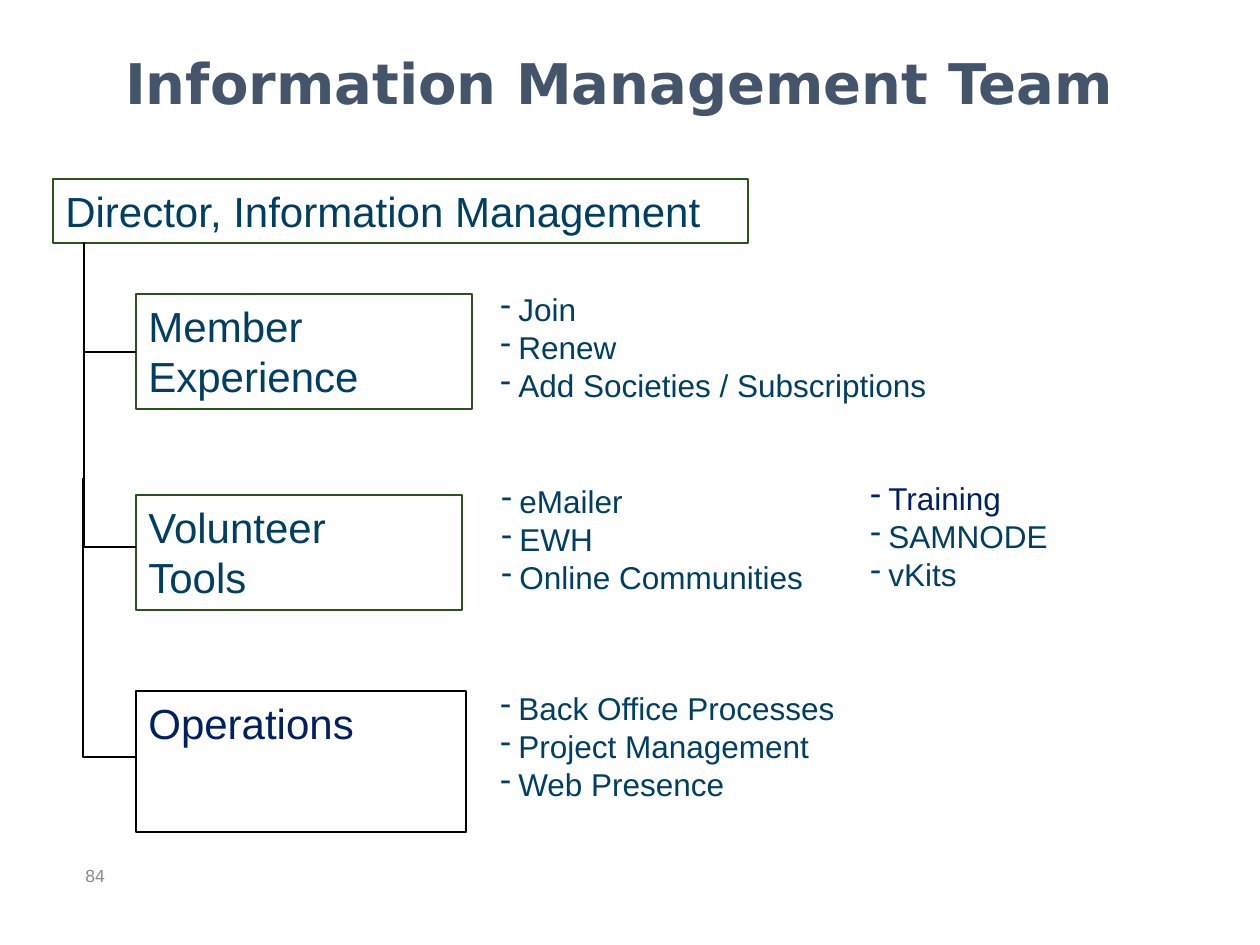
from lxml import etree
from pptx import Presentation
from pptx import util as u
from pptx.dml.color import RGBColor
from pptx.enum import shapes, text
from pptx.oxml import ns

SCALE = 914400 / 126
TEAL, NAVY, GREEN, BLACK = "003F61", "002060", "29541C", "000000"
LABEL = {"name": "Arial", "size": u.Pt(24)}
ITEM = {"name": "Arial", "size": u.Pt(18)}
TITLE = {"name": "DejaVu Sans", "size": u.Pt(32), "bold": True}
PAGE = {"name": "Arial", "size": u.Pt(10)}


def px(n):
    """Turn pixels into EMU."""
    return u.Emu(round(n * SCALE))


def rgb(code):
    """Turn a hex string into a colour."""
    return RGBColor.from_string(code)


def style(font, form, color):
    """Set font attributes and colour."""
    for key, val in form.items():
        setattr(font, key, val)
    font.color.rgb = rgb(color)


def write(shape, lines, form, color, align=text.PP_ALIGN.LEFT,
          anchor=text.MSO_ANCHOR.TOP):
    """Fill a shape with one paragraph per line."""
    frame = shape.text_frame
    frame.word_wrap = True
    frame.vertical_anchor = anchor
    frame.text = "\n".join(lines)
    for para in frame.paragraphs:
        para.alignment = align
        style(para.runs[0].font, form, color)
    return frame.paragraphs


def label(slide, area, lines, form, color, **place):
    """Add a plain text box."""
    box = slide.shapes.add_textbox(*map(px, area))
    return write(box, lines, form, color, **place)


def role(slide, area, lines, color=TEAL, edge=GREEN):
    """Add an outlined box of the chart."""
    box = slide.shapes.add_shape(shapes.MSO_SHAPE.RECTANGLE, *map(px, area))
    box.shadow.inherit = False
    box.fill.background()
    box.line.color.rgb = rgb(edge)
    box.line.width = u.Pt(0.75)
    write(box, lines, LABEL, color)


def tasks(slide, area, lines):
    """Add a list with dash bullets."""
    paras = label(slide, area, lines, ITEM, TEAL)
    for para in paras:
        props = para._p.get_or_add_pPr()
        props.set("marL", str(px(18)))
        props.set("indent", str(-px(18)))
        etree.SubElement(props, ns.qn("a:buChar")).set("char", "-")
    return paras


def branch(slide, x, y, end, foot):
    """Add an elbow that runs down and then right."""
    drop, run = foot - y, end - x
    left, top = (x + end - drop) / 2, (y + foot - run) / 2
    ends = left + drop, top, left, top + run
    line = slide.shapes.add_connector(shapes.MSO_CONNECTOR.ELBOW, *map(px, ends))
    line.line.color.rgb = rgb(BLACK)
    line.line.width = u.Pt(0.75)
    props = line._element.spPr
    props.find(ns.qn("a:xfrm")).set("rot", str(270 * 60000))
    props.find(ns.qn("a:prstGeom")).set("prst", "bentConnector2")
    etree.SubElement(props, ns.qn("a:effectLst"))


def main():
    """Build the team slide."""
    deck = Presentation()
    deck.slide_width, deck.slide_height = px(1260), px(945)
    slide = deck.slides.add_slide(deck.slide_layouts[6])

    label(slide, (84, 42, 1071, 105), ["Information Management Team"], TITLE,
          "44546A", align=text.PP_ALIGN.CENTER)
    role(slide, (53, 179, 695, 64), ["Director, Information Management"])
    role(slide, (136, 294, 336, 115), ["Member Experience"])
    role(slide, (136, 495, 326, 115), ["Volunteer", "Tools"])
    role(slide, (136, 691, 330, 141), ["Operations"], NAVY, BLACK)

    for x, y, foot in ((84, 242, 352), (84, 267, 547), (83, 478, 757)):
        branch(slide, x, y, 136, foot)

    tasks(slide, (488, 284, 529, 127),
          ["Join", "Renew", "Add Societies / Subscriptions"])
    tasks(slide, (488, 683, 378, 165),
          ["Back Office Processes", "Project Management", "Web Presence"])
    tasks(slide, (489, 476, 348, 127),
          ["eMailer", "EWH", "Online Communities"])
    extra = tasks(slide, (858, 473, 271, 149), ["Training", "SAMNODE", "vKits"])
    style(extra[0].runs[0].font, ITEM, NAVY)

    label(slide, (73, 851, 95, 50), ["84"], PAGE, "898989",
          anchor=text.MSO_ANCHOR.MIDDLE)
    deck.save("out.pptx")


if __name__ == "__main__":
    main()
